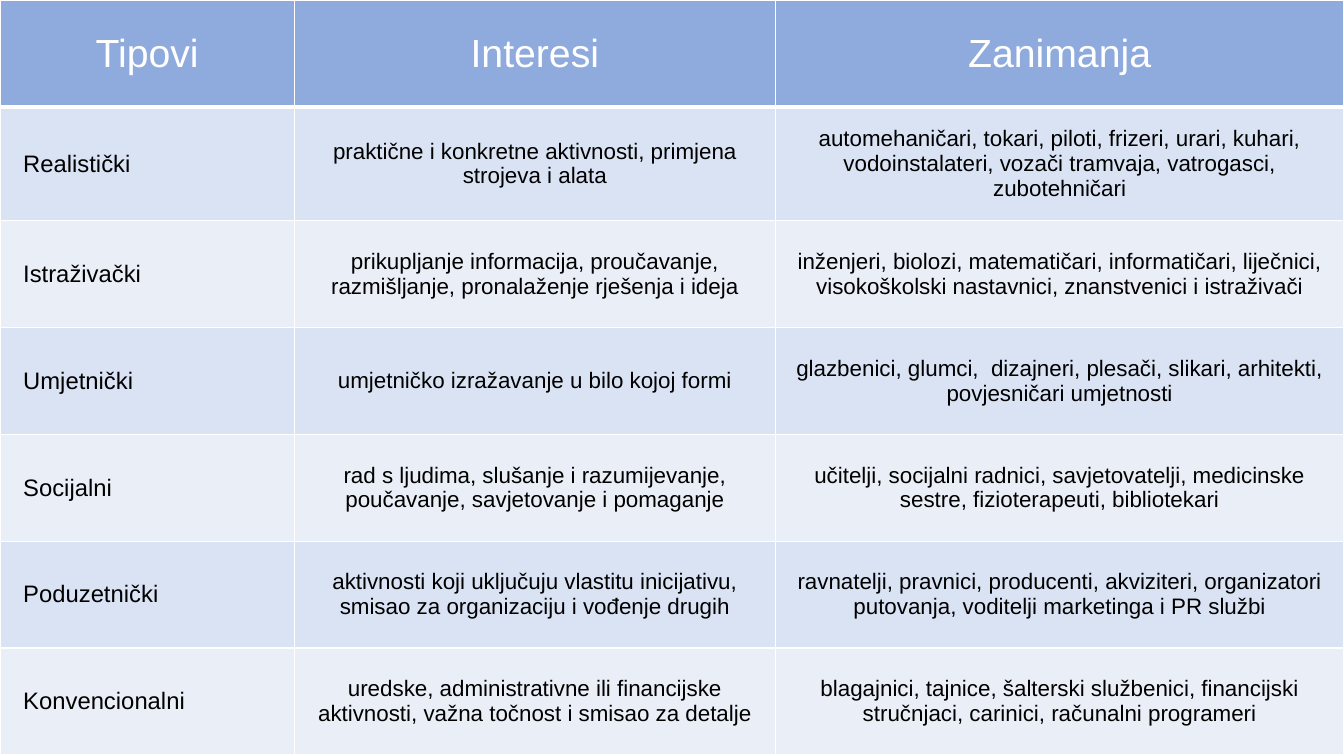
from dataclasses import dataclass

from lxml import etree
from pptx import Presentation
from pptx.dml.color import RGBColor
from pptx.enum.text import MSO_ANCHOR, PP_ALIGN
from pptx.oxml.ns import qn
from pptx.util import Inches, Pt

LEFT, CENTER = PP_ALIGN.LEFT, PP_ALIGN.CENTER
MIDDLE = MSO_ANCHOR.MIDDLE

FONT = "Arial"
WHITE, BLACK = "FFFFFF", "000000"
HEAD_FILL = "8FAADC"
BANDS = ("DAE3F3", "EAEFF7")
THIN, THICK = 1, 3
WIDTHS = (2.92, 4.77, 5.64)
ROW_HEIGHT, TALL_ROW = 1.06, 1.13


@dataclass(frozen=True)
class Style:
    size: int
    color: str
    align: int = CENTER
    indent: float = 0.1


@dataclass(frozen=True)
class Job:
    type: str
    interests: str
    careers: str


HEAD = Style(28, WHITE)
NAME = Style(17, BLACK, LEFT, 0.23)
BODY = Style(16, BLACK)

TITLES = Job("Tipovi", "Interesi", "Zanimanja")
JOBS = (
    Job("Realistički",
        "praktične i konkretne aktivnosti, primjena strojeva i alata",
        "automehaničari, tokari, piloti, frizeri, urari, kuhari, "
        "vodoinstalateri, vozači tramvaja, vatrogasci, zubotehničari"),
    Job("Istraživački",
        "prikupljanje informacija, proučavanje, razmišljanje, "
        "pronalaženje rješenja i ideja",
        "inženjeri, biolozi, matematičari, informatičari, liječnici, "
        "visokoškolski nastavnici, znanstvenici i istraživači"),
    Job("Umjetnički",
        "umjetničko izražavanje u bilo kojoj formi",
        "glazbenici, glumci,  dizajneri, plesači, slikari, arhitekti, "
        "povjesničari umjetnosti"),
    Job("Socijalni",
        "rad s ljudima, slušanje i razumijevanje, poučavanje, "
        "savjetovanje i pomaganje",
        "učitelji, socijalni radnici, savjetovatelji, medicinske sestre, "
        "fizioterapeuti, bibliotekari"),
    Job("Poduzetnički",
        "aktivnosti koji uključuju vlastitu inicijativu, smisao za "
        "organizaciju i vođenje drugih",
        "ravnatelji, pravnici, producenti, akviziteri, organizatori "
        "putovanja, voditelji marketinga i PR službi"),
    Job("Konvencionalni",
        "uredske, administrativne ili financijske aktivnosti, važna "
        "točnost i smisao za detalje",
        "blagajnici, tajnice, šalterski službenici, financijski "
        "stručnjaci, carinici, računalni programeri"),
)


def rgb(color: str) -> RGBColor:
    return RGBColor.from_string(color)


def add_border(cell, side: str, width: float) -> None:
    line = etree.SubElement(cell._tc.get_or_add_tcPr(), qn(f"a:ln{side}"),
                            w=str(Pt(width)))
    fill = etree.SubElement(line, qn("a:solidFill"))
    etree.SubElement(fill, qn("a:srgbClr"), val=WHITE)


def fill_cell(cell, text: str, style: Style, fill: str,
              top: float, bottom: float) -> None:
    for side, width in (("L", THIN), ("R", THIN), ("T", top), ("B", bottom)):
        add_border(cell, side, width)
    cell.fill.solid()
    cell.fill.fore_color.rgb = rgb(fill)
    cell.vertical_anchor = MIDDLE
    cell.margin_left = Inches(style.indent)
    cell.text = text
    para = cell.text_frame.paragraphs[0]
    para.alignment = style.align
    para.font.name = FONT
    para.font.size = Pt(style.size)
    para.font.bold = False
    para.font.color.rgb = rgb(style.color)


def add_jobs(slide, width: int, height: int) -> None:
    rows = (TITLES, *JOBS)
    table = slide.shapes.add_table(len(rows), len(WIDTHS), 0, 0,
                                   width, height).table
    for column, size in zip(table.columns, WIDTHS):
        column.width = Inches(size)
    for i, job in enumerate(rows):
        table.rows[i].height = Inches(TALL_ROW if i == 1 else ROW_HEIGHT)
        fill = BANDS[(i - 1) % 2] if i else HEAD_FILL
        styles = (NAME, BODY, BODY) if i else (HEAD,) * 3
        top = THICK if i == 1 else THIN
        bottom = THICK if i == 0 else THIN
        texts = (job.type, job.interests, job.careers)
        for j, (text, style) in enumerate(zip(texts, styles)):
            fill_cell(table.cell(i, j), text, style, fill, top, bottom)


def main() -> None:
    deck = Presentation()
    deck.slide_width = Inches(13.33)
    deck.slide_height = Inches(7.5)
    slide = deck.slides.add_slide(deck.slide_layouts.get_by_name("Blank"))
    add_jobs(slide, deck.slide_width, deck.slide_height)
    deck.save("out.pptx")


if __name__ == "__main__":
    main()
